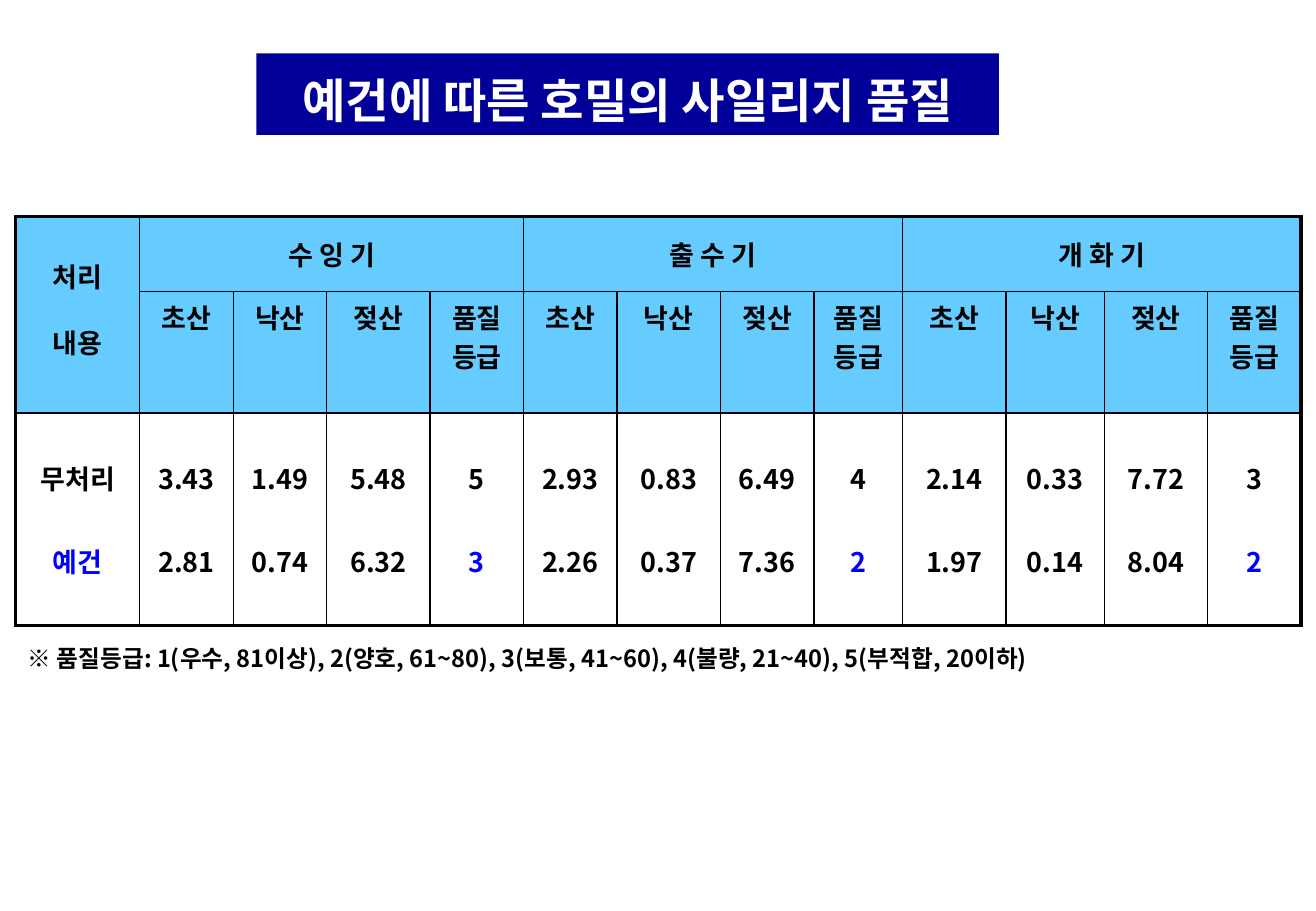
import pptx
import pptx.dml.color
import pptx.enum.text
import pptx.oxml
import pptx.oxml.ns
import pptx.util
from pptx.util import Inches

RGB = pptx.dml.color.RGBColor
BLACK = RGB(0, 0, 0)
WHITE = RGB(255, 255, 255)
NAVY = RGB(0, 0, 0x99)
BLUE = RGB(0, 0, 0xFF)
SKY = RGB(0x66, 0xCC, 0xFF)
FONT = "Noto Sans CJK KR"
NO_STYLE = "{2D5ABB26-0587-4C30-8999-92F81FD0307C}"
COLS = [1.02, 0.77, 0.77, 0.85, 0.77, 0.77, 0.85, 0.77, 0.73, 0.85, 0.81, 0.85, 0.77]
ROWS = [0.62, 1.0, 1.75]
STAGES = ["수 잉 기", "출 수 기", "개 화 기"]
MEASURES = ["초산", "낙산", "젖산", "품질등급"]
UNTREATED = ["무처리", "3.43", "1.49", "5.48", "5", "2.93", "0.83", "6.49", "4",
             "2.14", "0.33", "7.72", "3"]
WILTED = ["예건", "2.81", "0.74", "6.32", "3", "2.26", "0.37", "7.36", "2",
          "1.97", "0.14", "8.04", "2"]


def style_paragraph(p, text, size, color=BLACK, spacing=1.0, align=None):
    """Write bold text in a paragraph and format it."""
    p.text = text
    p.alignment = align
    p.line_spacing = spacing
    p.font.size = pptx.util.Pt(size)
    p.font.bold = True
    p.font.color.rgb = color
    p.font.name = FONT
    latin = p._p.pPr.find(".//" + pptx.oxml.ns.qn("a:latin"))
    latin.addnext(pptx.oxml.parse_xml(
        f'<a:ea {pptx.oxml.ns.nsdecls("a")} typeface="{FONT}"/>'))


def add_title(slide, text):
    """Turn the title placeholder into a filled banner."""
    sp = slide.shapes.title
    sp.left, sp.top, sp.width, sp.height = (Inches(v) for v in (2.11, 0.44, 6.11, 0.67))
    sp.fill.solid()
    sp.fill.fore_color.rgb = NAVY
    tf = sp.text_frame
    tf.word_wrap = False
    tf.auto_size = pptx.enum.text.MSO_AUTO_SIZE.NONE
    tf.vertical_anchor = pptx.enum.text.MSO_ANCHOR.MIDDLE
    style_paragraph(tf.paragraphs[0], text, 28, WHITE, 1.2, pptx.enum.text.PP_ALIGN.CENTER)


def add_note(slide, text):
    """Add the explanatory line under the table."""
    sp = slide.shapes.add_textbox(Inches(0.13), Inches(5.25), Inches(10.45), Inches(0.33))
    tf = sp.text_frame
    tf.word_wrap = True
    style_paragraph(tf.paragraphs[0], text, 14)


def set_borders(cell, r, c):
    """Draw thick borders on the table's outer edges and thin ones inside."""
    outer = {
        "L": c == 0,
        "R": c + cell.span_width == len(COLS),
        "T": r == 0,
        "B": r + cell.span_height == len(ROWS),
    }
    tcPr = cell._tc.get_or_add_tcPr()
    for side, thick in outer.items():
        width = pptx.util.Pt(2.25 if thick else 1)
        tcPr.append(pptx.oxml.parse_xml(
            f'<a:ln{side} {pptx.oxml.ns.nsdecls("a")} w="{width}"><a:solidFill>'
            f'<a:srgbClr val="{BLACK}"/></a:solidFill></a:ln{side}>'))


def fill_cell(cell, lines, spacing, fill=None, last_color=BLACK, gap=3.2):
    """Write centred lines in a cell and set its fill."""
    cell.margin_left = cell.margin_right = Inches(0.11)
    cell.margin_top = cell.margin_bottom = Inches(0.05)
    tf = cell.text_frame
    for i, line in enumerate(lines):
        p = tf.add_paragraph() if i else tf.paragraphs[0]
        color = last_color if i == len(lines) - 1 else BLACK
        style_paragraph(p, line, 16, color, spacing, pptx.enum.text.PP_ALIGN.CENTER)
        if i:
            p.space_before = pptx.util.Pt(gap)
    if fill is None:
        cell.fill.background()
    else:
        cell.fill.solid()
        cell.fill.fore_color.rgb = fill


def add_quality_table(slide):
    """Add the silage quality table with its merged headings."""
    tbl = slide.shapes.add_table(len(ROWS), len(COLS), Inches(0.13), Inches(1.78),
                                 Inches(sum(COLS)), Inches(sum(ROWS))).table
    tbl.first_row = tbl.horz_banding = False
    tbl._tbl.tblPr.find(pptx.oxml.ns.qn("a:tableStyleId")).text = NO_STYLE
    for col, width in zip(tbl.columns, COLS):
        col.width = Inches(width)
    for row, height in zip(tbl.rows, ROWS):
        row.height = Inches(height)

    corner = tbl.cell(0, 0)
    corner.merge(tbl.cell(1, 0))
    for i in range(len(STAGES)):
        first = 1 + i * len(MEASURES)
        tbl.cell(0, first).merge(tbl.cell(0, first + len(MEASURES) - 1))
    for r in range(len(ROWS)):
        for c in range(len(COLS)):
            cell = tbl.cell(r, c)
            if not cell.is_spanned:
                set_borders(cell, r, c)

    fill_cell(corner, ["처리", "내용"], 1.0, SKY, gap=16)
    corner.vertical_anchor = pptx.enum.text.MSO_ANCHOR.MIDDLE
    corner.margin_top, corner.margin_bottom = 0, Inches(0.1)
    for i, stage in enumerate(STAGES):
        first = 1 + i * len(MEASURES)
        fill_cell(tbl.cell(0, first), [stage], 1.3, SKY)
        for j, measure in enumerate(MEASURES):
            fill_cell(tbl.cell(1, first + j), [measure], 1.0, SKY)
    for c, values in enumerate(zip(UNTREATED, WILTED)):
        color = BLUE if c % len(MEASURES) == 0 else BLACK
        fill_cell(tbl.cell(2, c), values, 2.0, last_color=color)


def main():
    """Build and save the slide."""
    prs = pptx.Presentation()
    prs.slide_width, prs.slide_height = Inches(10.83), Inches(7.5)
    slide = prs.slides.add_slide(prs.slide_layouts[5])
    add_title(slide, "예건에 따른 호밀의 사일리지 품질")
    add_quality_table(slide)
    add_note(slide, "※ 품질등급: 1(우수, 81이상), 2(양호, 61~80), 3(보통, 41~60), "
                    "4(불량, 21~40), 5(부적합, 20이하)")
    prs.save("out.pptx")


if __name__ == "__main__":
    main()
